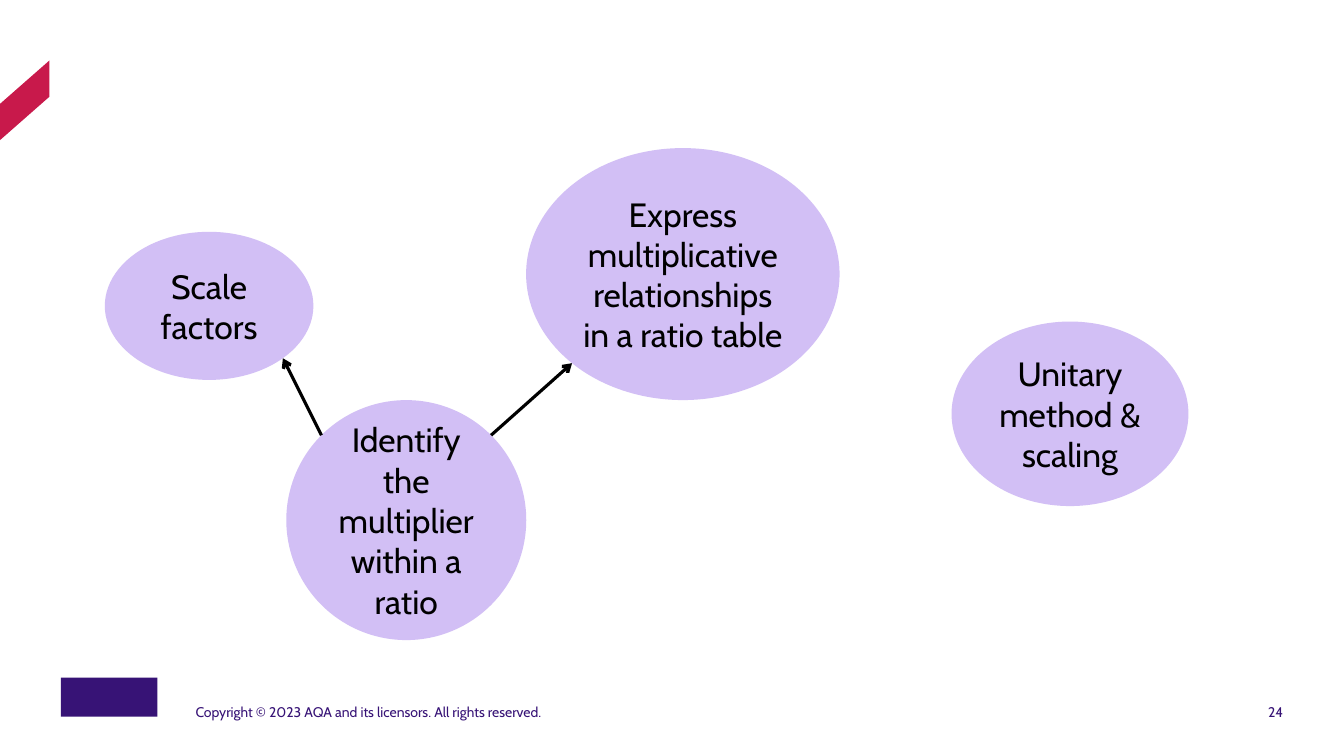
import math

from lxml import etree
from pptx import Presentation
from pptx.dml.color import RGBColor
from pptx.enum import shapes, text
from pptx.oxml import ns
from pptx.util import Pt

WHITE = RGBColor(0xFF, 0xFF, 0xFF)
BLACK = RGBColor(0x00, 0x00, 0x00)
LILAC = RGBColor(0xD2, 0xBF, 0xF5)
PURPLE = RGBColor(0x37, 0x13, 0x76)
CRIMSON = RGBColor(0xC8, 0x19, 0x4B)


class ConceptMap:
    font = "Cabin"
    idea_size = 24
    footer_size = 10

    def __init__(self, slide):
        self.slide = slide
        fill = slide.background.fill
        fill.solid()
        fill.fore_color.rgb = WHITE

    def paint(self, shape, colour):
        shape.shadow.inherit = False
        shape.fill.solid()
        shape.fill.fore_color.rgb = colour
        shape.line.fill.background()

    def add_wording(self, frame, wording, size, colour, align):
        frame.word_wrap = True
        paragraph = frame.paragraphs[0]
        paragraph.alignment = align
        run = paragraph.add_run()
        run.text = wording
        run.font.name = self.font
        run.font.size = Pt(size)
        run.font.color.rgb = colour

    def block(self, kind, box, colour):
        shape = self.slide.shapes.add_shape(kind, *map(Pt, box))
        self.paint(shape, colour)
        return shape

    def ribbon(self, corners, colour):
        builder = self.slide.shapes.build_freeform(*map(Pt, corners[0]))
        builder.add_line_segments([tuple(map(Pt, c)) for c in corners[1:]])
        self.paint(builder.convert_to_shape(), colour)

    def idea(self, wording, box):
        oval = self.block(shapes.MSO_SHAPE.OVAL, box, LILAC)
        oval.text_frame.vertical_anchor = text.MSO_ANCHOR.MIDDLE
        self.add_wording(oval.text_frame, wording, self.idea_size, BLACK, text.PP_ALIGN.CENTER)
        return oval

    def rim(self, oval, degrees):
        """Point on the oval's edge, measured clockwise from its right side."""
        angle = math.radians(degrees)
        x = oval.left + oval.width * (1 + math.cos(angle)) / 2
        y = oval.top + oval.height * (1 + math.sin(angle)) / 2
        return round(x), round(y)

    def arrow(self, start, end):
        link = self.slide.shapes.add_connector(shapes.MSO_CONNECTOR.STRAIGHT, *start, *end)
        link.line.color.rgb = BLACK
        link.line.width = Pt(2.25)
        outline = link._element.spPr.find(ns.qn("a:ln"))
        etree.SubElement(outline, ns.qn("a:tailEnd"), type="arrow")
        etree.SubElement(link._element.spPr, ns.qn("a:effectLst"))

    def footer(self, wording, left, width, align):
        box = self.slide.shapes.add_textbox(Pt(left), Pt(486), Pt(width), Pt(28.8))
        frame = box.text_frame
        frame.margin_left = frame.margin_right = frame.margin_top = frame.margin_bottom = 0
        frame.vertical_anchor = text.MSO_ANCHOR.BOTTOM
        self.add_wording(frame, wording, self.footer_size, PURPLE, align)


def main():
    deck = Presentation()
    deck.slide_width, deck.slide_height = Pt(960), Pt(540)
    page = ConceptMap(deck.slides.add_slide(deck.slide_layouts[6]))

    page.ribbon([(35.3, 43.2), (35.3, 69.1), (0, 100.1), (0, 74.2)], CRIMSON)
    page.block(shapes.MSO_SHAPE.RECTANGLE, (43.5, 484, 69, 28), PURPLE)

    multiplier = page.idea("Identify the multiplier within a ratio", (204.5, 285.8, 171.4, 171.4))
    page.idea("Unitary method & scaling", (679.7, 229.7, 169.2, 131.8))
    ratio_table = page.idea("Express multiplicative relationships in a ratio table",
                            (375.8, 105.8, 223.9, 180))
    scale_factors = page.idea("Scale factors", (74.9, 165.6, 149, 105.8))

    page.arrow(page.rim(multiplier, 225), page.rim(scale_factors, 45))
    page.arrow(page.rim(multiplier, 315), page.rim(ratio_table, 135))

    page.footer("Copyright © 2023 AQA and its licensors. All rights reserved.",
                139.7, 570.2, text.PP_ALIGN.LEFT)
    page.footer("24", 848.9, 67.7, text.PP_ALIGN.RIGHT)
    deck.save("out.pptx")


if __name__ == "__main__":
    main()
